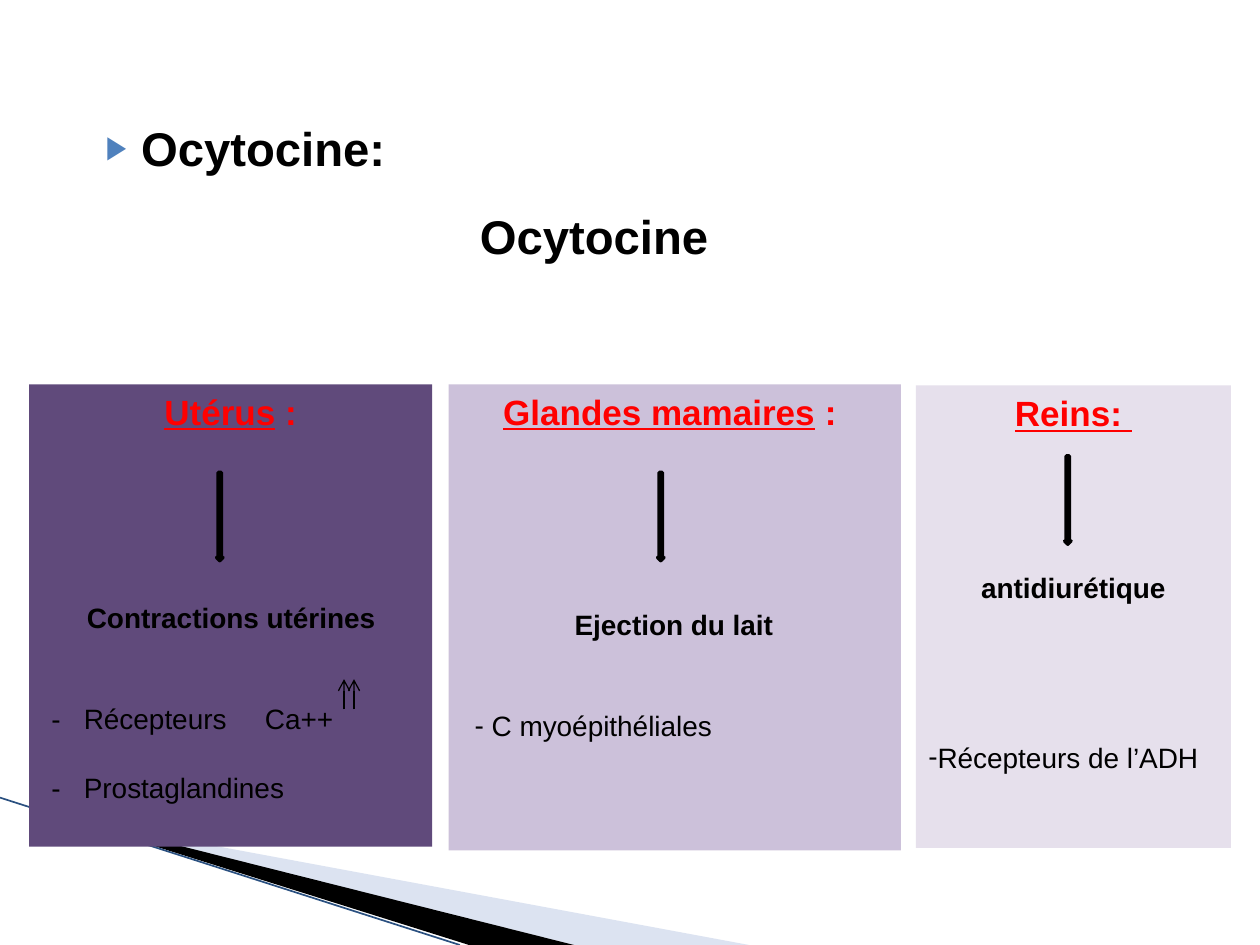
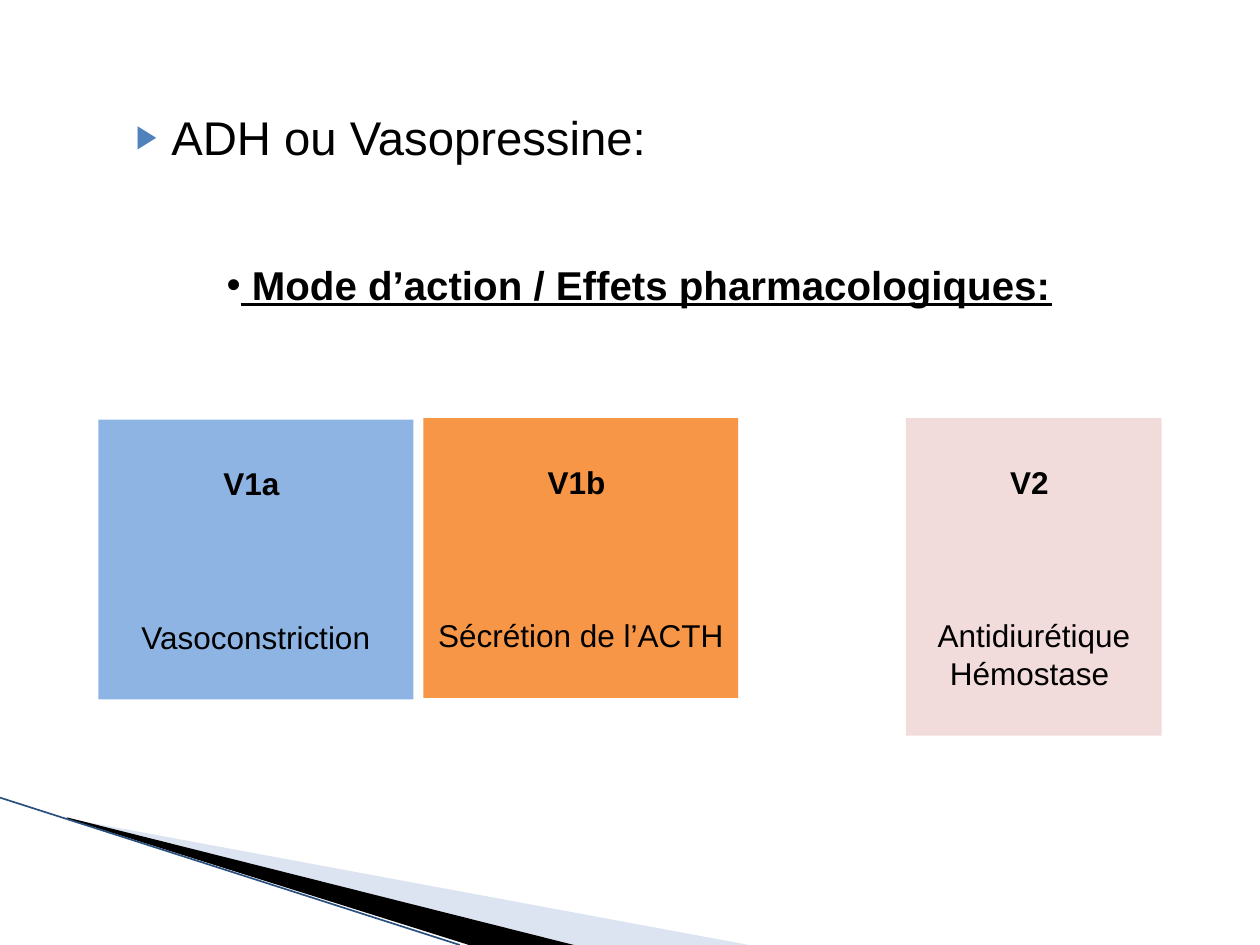
from lxml import etree
from pptx import Presentation
from pptx.dml.color import RGBColor
from pptx.enum.shapes import MSO_CONNECTOR, MSO_SHAPE
from pptx.enum.text import MSO_ANCHOR, MSO_AUTO_SIZE, PP_ALIGN
from pptx.oxml.ns import qn
from pptx.util import Pt

RECT, DOWN = MSO_SHAPE.RECTANGLE, MSO_SHAPE.DOWN_ARROW
LINE = MSO_CONNECTOR.STRAIGHT
LEFT, MID = PP_ALIGN.LEFT, PP_ALIGN.CENTER
TOP, FIXED = MSO_ANCHOR.TOP, MSO_AUTO_SIZE.NONE

BLACK = RGBColor(0x00, 0x00, 0x00)
RED = RGBColor(0xFF, 0x00, 0x00)
BLUE = RGBColor(0x4F, 0x81, 0xBD)
NAVY = RGBColor(0x2A, 0x50, 0x80)
PALE = RGBColor(0xDC, 0xE3, 0xF1)
PLUM = RGBColor(0x60, 0x4A, 0x7B)
LILAC = RGBColor(0xCC, 0xC1, 0xDA)
MIST = RGBColor(0xE6, 0xE0, 0xEC)
SKY = RGBColor(0x8E, 0xB4, 0xE3)
AMBER = RGBColor(0xF7, 0x96, 0x46)
ROSE = RGBColor(0xF2, 0xDC, 0xDB)
FONT = "Arial"

# Content: a paragraph is (runs, format); a run is (text, underlined)
HEAD = dict(size=20, bold=True, color=RED, align=MID)
KEY = dict(size=16, bold=True, align=MID)
ITEM = dict(size=16)
TABS = dict(ITEM, tabs=(18.5, 122))

ORGANS = [  # fill, box, arrow left and top, paragraphs
    (PLUM, (16.6, 219.6, 230.4, 264.2), (123.8, 270),
     [([("Utérus", True), (" :", False)], HEAD)]),
    (LILAC, (256.3, 219.6, 258.5, 266.4), (375.8, 270),
     [([("Glandes mamaires", True), (" : ", False)], HEAD)]),
    (MIST, (523.4, 220.3, 180, 264.2), (608.4, 260.6),
     [([("Reins: ", True)], HEAD),
      ("antidiurétique", dict(KEY, before=78)),
      ("Récepteurs de l’ADH", dict(ITEM, before=78, bullet="-", hang=5.3))]),
]
EFFECTS = [  # box, paragraphs
    ((22.3, 339.4, 219.6, 130),
     [("Contractions utérines", KEY),
      ("-\tRécepteurs\tCa++", dict(TABS, before=39)),
      ("-\tProstaglandines", dict(TABS, before=20))]),
    ((264.2, 343.4, 241.9, 85),
     [("Ejection du lait", KEY),
      ("C myoépithéliales", dict(ITEM, before=39, bullet="-", hang=9.7))]),
]
RISES = (196.6, 202.3)

TYPES = [  # fill, box, name, effects
    (SKY, (56.2, 239.8, 180, 159.8), "V1a ", ["Vasoconstriction"]),
    (AMBER, (241.9, 239, 180, 159.8), "V1b ", ["Sécrétion de l’ACTH"]),
    (ROSE, (517.7, 239, 146.2, 181.4), "V2 ",
     ["Antidiurétique", "Hémostase "]),
]

# Corner wedges shared by the slides
WEDGES = [
    (PALE, [(39.6, 468.4), (428.4, 540), (328.3, 540), (39.6, 468)]),
    (BLACK, [(38.2, 467.3), (328.3, 540), (267.8, 540), (38.9, 468)]),
]


def mark(para, char=None, hang=0, tint=None, scale=None, tabs=()):
    """Add bullet and tab stops to a paragraph."""
    props = para._p.get_or_add_pPr()

    def add(tag, home=props, **attrs):
        node = etree.SubElement(home, qn("a:" + tag))
        for key, value in attrs.items():
            node.set(key, str(value))
        return node

    if char:
        if tint:
            add("srgbClr", add("buClr"), val=tint)
        if scale:
            add("buSzPct", val=scale * 1000)
        add("buFont", typeface=FONT)
        add("buChar", char=char)
    if tabs:
        home = add("tabLst")
        for stop in tabs:
            add("tab", home, pos=Pt(stop), algn="l")
    if hang:
        props.set("indent", str(-Pt(hang)))


def write(frame, text, first=False, size=16, bold=False, color=BLACK,
          align=LEFT, before=0, bullet=None, hang=0, left=None, tint=None,
          scale=None, tabs=(), under=False):
    """Write one paragraph with its format."""
    para = frame.paragraphs[0] if first else frame.add_paragraph()
    para.alignment = align
    mark(para, bullet, hang, tint, scale, tabs)
    if hang:
        para._p.get_or_add_pPr().set("marL", str(Pt(left or hang)))
    if before:
        para.space_before = Pt(before)
    runs = [(text, under)] if isinstance(text, str) else text
    for words, line in runs:
        run = para.add_run()
        run.text = words
        font = run.font
        font.name, font.size, font.bold = FONT, Pt(size), bold
        font.color.rgb, font.underline = color, line


def fill_text(shape, paras):
    frame = shape.text_frame
    frame.word_wrap, frame.auto_size = True, FIXED
    frame.vertical_anchor = TOP
    for num, (text, style) in enumerate(paras):
        write(frame, text, first=num == 0, **style)
    return frame


def place(box):
    return [Pt(num) for num in box]


def add_text(slide, box, paras):
    return fill_text(slide.shapes.add_textbox(*place(box)), paras)


def add_shape(slide, kind, box, fill):
    shape = slide.shapes.add_shape(kind, *place(box))
    shape.shadow.inherit = False
    shape.fill.solid()
    shape.fill.fore_color.rgb = fill
    shape.line.fill.background()
    return shape


def add_line(slide, ends, color, width, arrow=False):
    line = slide.shapes.add_connector(LINE, *place(ends))
    line.line.color.rgb, line.line.width = color, Pt(width)
    props = line._element.spPr
    if arrow:
        tail = etree.SubElement(props.find(qn("a:ln")), qn("a:tailEnd"))
        tail.set("type", "arrow")
    etree.SubElement(props, qn("a:effectLst"))


def add_slide(deck, title, box, bold):
    """Start a slide with its corner wedges and bulleted title."""
    slide = deck.slides.add_slide(deck.slide_layouts[5])
    for color, points in WEDGES:
        build = slide.shapes.build_freeform(*points[0], scale=Pt(1))
        build.add_line_segments(points[1:])
        wedge = build.convert_to_shape()
        wedge.shadow.inherit = False
        wedge.fill.solid()
        wedge.fill.fore_color.rgb = color
        wedge.line.fill.background()
    add_line(slide, (0, 455.8, 262.8, 540), NAVY, 0.95)
    head = slide.shapes.title
    head.left, head.top, head.width, head.height = place(box)
    fill_text(head, [(title, dict(size=27, bold=bold, bullet="▶", tint=BLUE,
                                  scale=68, left=28.8, hang=20.2))])
    return slide


def oxytocin(deck):
    slide = add_slide(deck, "Ocytocine:", (44.6, 64.5, 247.7, 40), True)
    add_text(slide, (267.1, 115, 160, 40),
             [("Ocytocine", dict(size=27, bold=True))])
    # Organ panels with their arrows
    for fill, box, spot, paras in ORGANS:
        fill_text(add_shape(slide, RECT, box, fill), paras)
        arrow = add_shape(slide, DOWN, (*spot, 3.6, 50.4), BLUE)
        arrow.line.color.rgb, arrow.line.width = BLACK, Pt(2)
    for box, paras in EFFECTS:
        add_text(slide, box, paras)
    # Calcium rise
    for left in RISES:
        add_line(slide, (left, 405.4, left, 388.1), BLACK, 0.75, arrow=True)


def vasopressin(deck):
    slide = add_slide(deck, "ADH ou Vasopressine:",
                      (61.9, 58, 326.2, 40), False)
    add_text(slide, (122.4, 145, 500, 35),
             [(" Mode d’action / Effets pharmacologiques:",
               dict(size=23, bold=True, under=True, bullet="•", hang=8))])
    # Receptor types
    for fill, box, name, effects in TYPES:
        paras = [(name, dict(size=18, bold=True, align=MID))]
        for num, effect in enumerate(effects):
            paras.append((effect, dict(size=18, align=MID,
                                       before=0 if num else 66)))
        frame = fill_text(add_shape(slide, RECT, box, fill), paras)
        frame.margin_top = Pt(25.6)


def main():
    deck = Presentation()
    deck.slide_width, deck.slide_height = Pt(720), Pt(540)
    oxytocin(deck)
    vasopressin(deck)
    deck.save("out.pptx")


if __name__ == "__main__":
    main()
